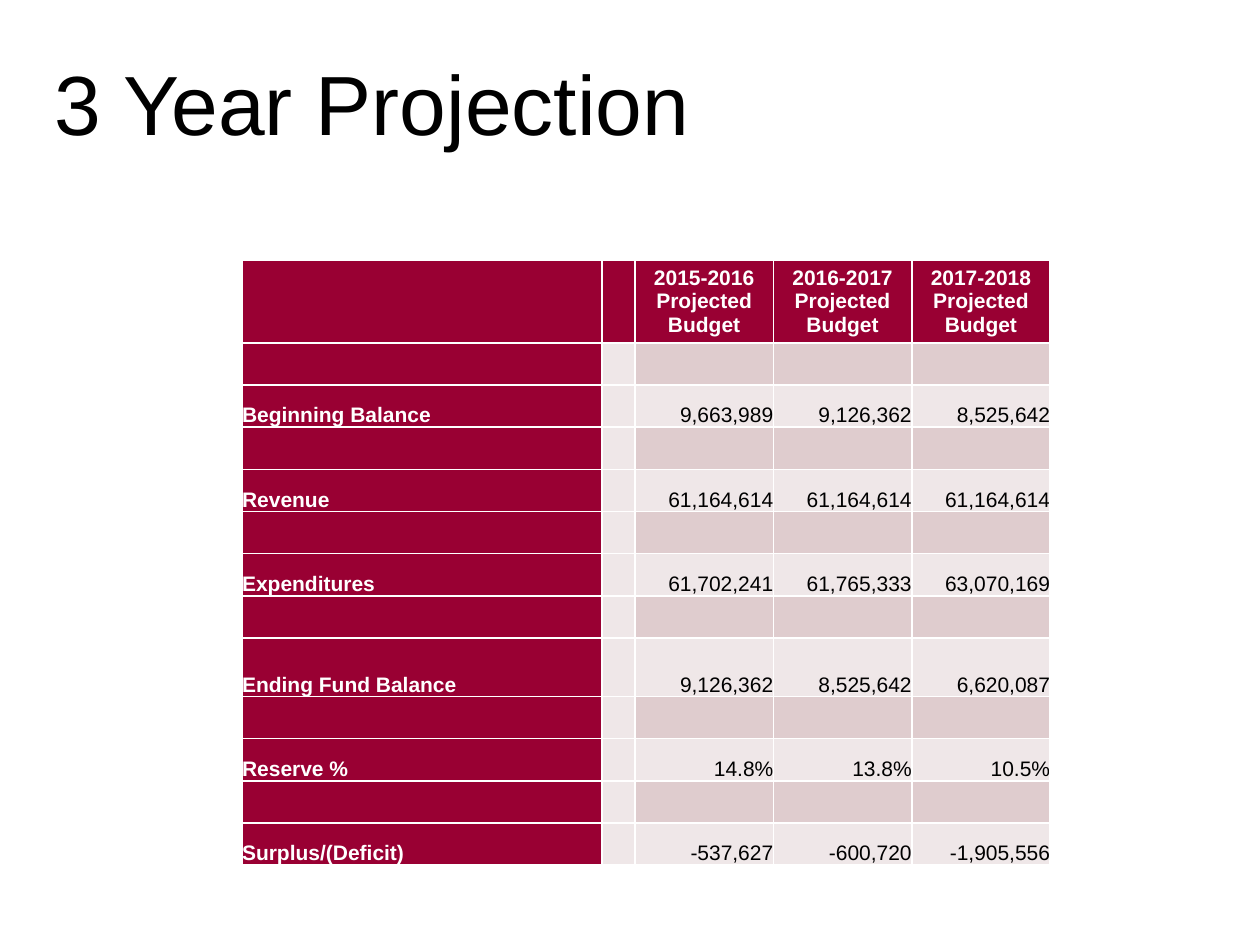
"""Build the three-year budget projection slide."""
from dataclasses import dataclass
from typing import Optional

from lxml.etree import SubElement
from pptx import Presentation
from pptx.dml.color import RGBColor
from pptx.enum.text import MSO_ANCHOR as Anchor, PP_ALIGN as Align
from pptx.oxml.ns import qn
from pptx.util import Cm, Pt

BLACK = RGBColor(0x00, 0x00, 0x00)
WHITE = RGBColor(0xFF, 0xFF, 0xFF)
CRIMSON = RGBColor(0x99, 0x00, 0x33)
PALE = RGBColor(0xEF, 0xE7, 0xE8)
ROSE = RGBColor(0xDF, 0xCC, 0xCE)
FONT = "Arial"


@dataclass(frozen=True)
class BudgetLine:
    label: str
    amounts: tuple[str, str, str]
    height: float = 0.85


@dataclass(frozen=True)
class CellStyle:
    fill: RGBColor
    color: RGBColor = BLACK
    bold: bool = False
    align: Optional[Align] = None
    anchor: Anchor = Anchor.BOTTOM


HEADER = CellStyle(CRIMSON, WHITE, True, Align.CENTER, Anchor.MIDDLE)
LABEL = CellStyle(CRIMSON, WHITE, True)
AMOUNT = CellStyle(PALE, align=Align.RIGHT)
SPACER = CellStyle(PALE)
BAND = CellStyle(ROSE)

YEARS = ("2015-2016", "2016-2017", "2017-2018")
COLUMN_WIDTHS = (7.26, 0.66) + (2.79,) * len(YEARS)
HEADER_HEIGHT = 1.67
BAND_HEIGHT = 0.85
BUDGET = (
    BudgetLine("Beginning Balance", ("9,663,989", "9,126,362", "8,525,642")),
    BudgetLine("Revenue", ("61,164,614", "61,164,614", "61,164,614")),
    BudgetLine("Expenditures", ("61,702,241", "61,765,333", "63,070,169")),
    BudgetLine("Ending Fund Balance", ("9,126,362", "8,525,642", "6,620,087"), 1.18),
    BudgetLine("Reserve %", ("14.8%", "13.8%", "10.5%")),
    BudgetLine("Surplus/(Deficit)", ("-537,627", "-600,720", "-1,905,556")),
)


def add_run(paragraph, text: str, size: float, color: RGBColor, bold: bool = False) -> None:
    """Append one styled run."""
    run = paragraph.add_run()
    run.text = text
    run.font.name = FONT
    run.font.size = Pt(size)
    run.font.bold = bold
    run.font.color.rgb = color


def add_borders(cell) -> None:
    """Give all four sides of a cell a thin white line."""
    properties = cell._tc.get_or_add_tcPr()
    for side in ("lnL", "lnR", "lnT", "lnB"):
        line = SubElement(properties, qn(f"a:{side}"), w=str(Pt(1)))
        SubElement(SubElement(line, qn("a:solidFill")), qn("a:srgbClr"), val=str(WHITE))


def fill_cell(cell, text: str, style: CellStyle) -> None:
    """Style a cell and write its text, if any."""
    add_borders(cell)
    cell.fill.solid()
    cell.fill.fore_color.rgb = style.fill
    cell.margin_left = cell.margin_right = cell.margin_top = cell.margin_bottom = 0
    cell.vertical_anchor = style.anchor
    if text:
        paragraph = cell.text_frame.paragraphs[0]
        paragraph.alignment = style.align
        add_run(paragraph, text, 12, style.color, style.bold)


def fill_row(table, index: int, height: float, texts: tuple[str, ...],
             styles: tuple[CellStyle, CellStyle, CellStyle]) -> None:
    """Fill a row from its label, spacer and yearly styles."""
    row = table.rows[index]
    row.height = Cm(height)
    label, spacer, yearly = styles
    for cell, text, style in zip(row.cells, texts, (label, spacer) + (yearly,) * len(YEARS)):
        fill_cell(cell, text, style)


def add_title(slide) -> None:
    """Add the slide title."""
    frame = slide.shapes.add_textbox(Cm(0.85), Cm(0.85), Cm(23.7), Cm(2.43)).text_frame
    frame.word_wrap = True
    frame.vertical_anchor = Anchor.MIDDLE
    add_run(frame.paragraphs[0], "3 Year Projection", 48, BLACK)


def add_projection(slide) -> None:
    """Add the budget table with a tinted band above every line."""
    table = slide.shapes.add_table(
        1 + 2 * len(BUDGET), len(COLUMN_WIDTHS), Cm(4.88), Cm(5.24), Cm(16.29), Cm(12.2)
    ).table
    for column, width in zip(table.columns, COLUMN_WIDTHS):
        column.width = Cm(width)
    headings = tuple(f"{year} Projected Budget" for year in YEARS)
    fill_row(table, 0, HEADER_HEIGHT, ("", "") + headings, (HEADER, HEADER, HEADER))
    for number, line in enumerate(BUDGET):
        band = 1 + 2 * number
        fill_row(table, band, BAND_HEIGHT, ("",) * len(COLUMN_WIDTHS), (LABEL, SPACER, BAND))
        fill_row(table, band + 1, line.height, (line.label, "") + line.amounts,
                 (LABEL, SPACER, AMOUNT))


def main() -> None:
    """Create and save the presentation."""
    deck = Presentation()
    deck.slide_width, deck.slide_height = Cm(25.4), Cm(19.05)
    slide = deck.slides.add_slide(deck.slide_layouts[6])
    add_title(slide)
    add_projection(slide)
    deck.save("out.pptx")


if __name__ == "__main__":
    main()
